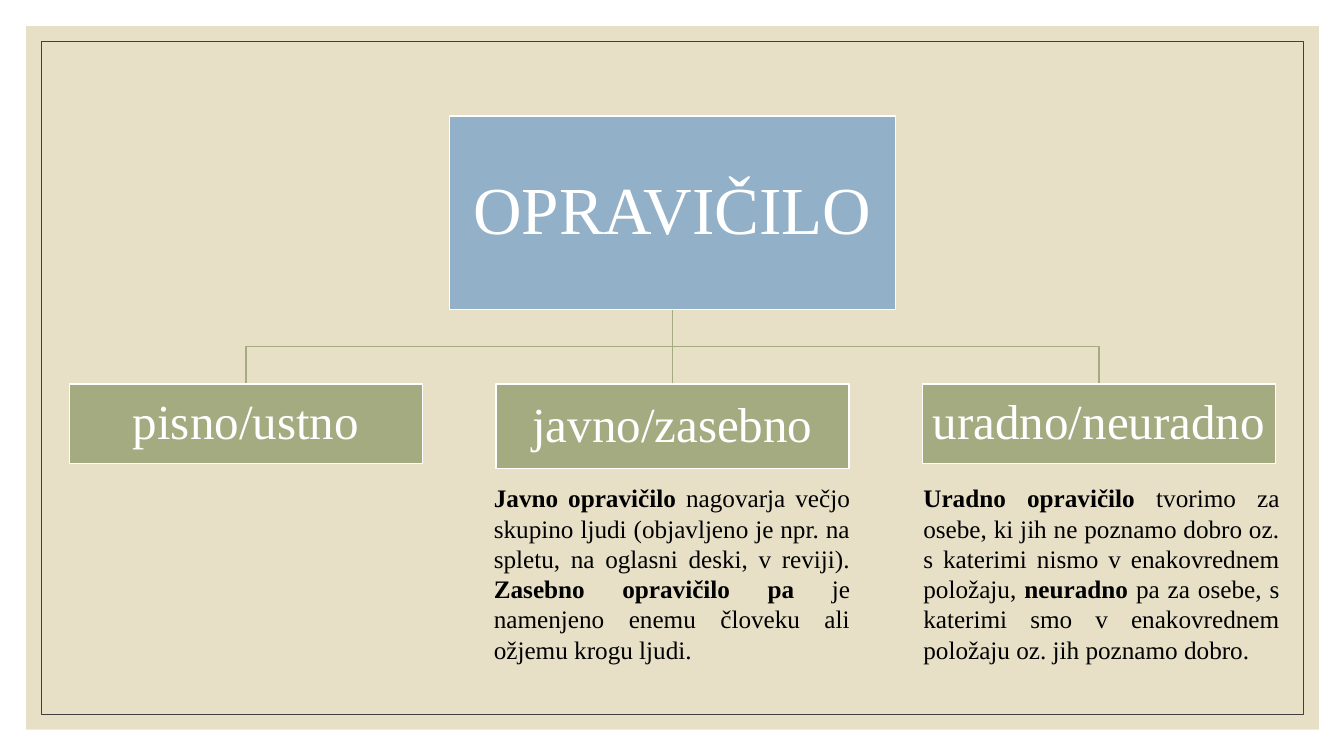
"""Build a slide with a tree diagram of the kinds of apology."""
from dataclasses import dataclass

from lxml import etree
from pptx import Presentation
from pptx import util as u
from pptx.dml.color import RGBColor
from pptx.enum import shapes, text
from pptx.oxml.ns import qn

EMU_PER_PX = 9144


@dataclass(frozen=True)
class Theme:
    font: str = "Times New Roman"
    sand: str = "E7E0C7"
    frame: str = "404040"
    blue: str = "92B0C8"
    green: str = "A5AB81"
    white: str = "FFFFFF"
    black: str = "000000"
    root_size: int = 48
    branch_size: int = 35
    body_size: int = 18


@dataclass(frozen=True)
class Box:
    left: int
    top: int
    width: int
    height: int
    fill: str | None = None
    line: str | None = None
    line_width: float = 1
    label: str = ""
    size: int = 0
    inset: int = 2

    @property
    def center(self) -> int:
        return self.left + self.width // 2

    @property
    def bottom(self) -> int:
        return self.top + self.height


@dataclass(frozen=True)
class Note:
    left: int
    runs: tuple[tuple[str, bool], ...]


THEME = Theme()
PANELS = (
    Box(26, 26, 1282, 698, fill=THEME.sand),
    Box(41, 41, 1252, 668, line=THEME.frame, line_width=0.5),
)
ROOT = Box(446, 115, 442, 192, THEME.blue, THEME.white,
           label="OPRAVIČILO", size=THEME.root_size, inset=3)
BRANCHES = tuple(
    Box(69 + 423 * column, 381, 350, height, THEME.green, THEME.white,
        label=label, size=THEME.branch_size)
    for column, (label, height) in enumerate(
        (("pisno/ustno", 79), ("javno/zasebno", 84), ("uradno/neuradno", 79)))
)
NOTES = (
    Note(906, (
        ("Uradno opravičilo ", True),
        ("tvorimo za osebe, ki jih ne poznamo dobro oz. s katerimi nismo "
         "v enakovrednem položaju, ", False),
        ("neuradno", True),
        (" pa za osebe, s katerimi smo v enakovrednem položaju oz. "
         "jih poznamo dobro.", False),
    )),
    Note(480, (
        ("Javno opravičilo ", True),
        ("nagovarja večjo skupino ljudi (objavljeno je npr. na spletu, "
         "na oglasni deski, v reviji).", False),
        (" Zasebno opravičilo pa ", True),
        ("je namenjeno enemu človeku ali ožjemu krogu ljudi.", False),
    )),
)


def px(*lengths: int) -> list[u.Emu]:
    return [u.Emu(length * EMU_PER_PX) for length in lengths]


def style_line(line, color: str, width: float) -> None:
    line.color.rgb = RGBColor.from_string(color)
    line.width = u.Pt(width)


def style_paragraph(paragraph, size: int, color: str, alignment) -> None:
    paragraph.alignment = alignment
    paragraph.font.name = THEME.font
    paragraph.font.size = u.Pt(size)
    paragraph.font.color.rgb = RGBColor.from_string(color)


def draw_box(slide, box: Box) -> None:
    shape = slide.shapes.add_shape(
        shapes.MSO_SHAPE.RECTANGLE,
        *px(box.left, box.top, box.width, box.height))
    shape.shadow.inherit = False
    if box.fill:
        shape.fill.solid()
        shape.fill.fore_color.rgb = RGBColor.from_string(box.fill)
    else:
        shape.fill.background()
    if box.line:
        style_line(shape.line, box.line, box.line_width)
    else:
        shape.line.fill.background()
    if box.label:
        frame = shape.text_frame
        frame.word_wrap = True
        frame.vertical_anchor = text.MSO_ANCHOR.MIDDLE
        inset, = px(box.inset)
        frame.margin_left = frame.margin_right = inset
        frame.margin_top = frame.margin_bottom = inset
        paragraph = frame.paragraphs[0]
        paragraph.text = box.label
        paragraph.line_spacing = 0.9
        style_paragraph(paragraph, box.size, THEME.white, text.PP_ALIGN.CENTER)


def draw_link(slide, parent: Box, child: Box) -> None:
    if parent.center == child.center:
        link = slide.shapes.add_connector(
            shapes.MSO_CONNECTOR.STRAIGHT,
            *px(parent.center, parent.bottom, child.center, child.top))
        etree.SubElement(link._element.spPr, qn("a:effectLst"))
    else:
        middle = (parent.bottom + child.top) // 2
        builder = slide.shapes.build_freeform(
            parent.center, parent.bottom, scale=EMU_PER_PX)
        builder.add_line_segments(
            [(parent.center, middle), (child.center, middle),
             (child.center, child.top)], close=False)
        link = builder.convert_to_shape()
        link.shadow.inherit = False
        link.fill.background()
    style_line(link.line, THEME.green, 1)


def draw_note(slide, note: Note) -> None:
    frame = slide.shapes.add_textbox(*px(note.left, 474, 373, 192)).text_frame
    frame.word_wrap = True
    frame.auto_size = text.MSO_AUTO_SIZE.SHAPE_TO_FIT_TEXT
    paragraph = frame.paragraphs[0]
    style_paragraph(paragraph, THEME.body_size, THEME.black,
                    text.PP_ALIGN.JUSTIFY)
    for words, bold in note.runs:
        run = paragraph.add_run()
        run.text = words
        run.font.bold = bold


def main() -> None:
    presentation = Presentation()
    presentation.slide_width, presentation.slide_height = px(1333, 750)
    slide = presentation.slides.add_slide(presentation.slide_layouts[6])
    for panel in PANELS:
        draw_box(slide, panel)
    for branch in reversed(BRANCHES):
        draw_link(slide, ROOT, branch)
    for box in (ROOT, *BRANCHES):
        draw_box(slide, box)
    for note in NOTES:
        draw_note(slide, note)
    presentation.save("out.pptx")


if __name__ == "__main__":
    main()
